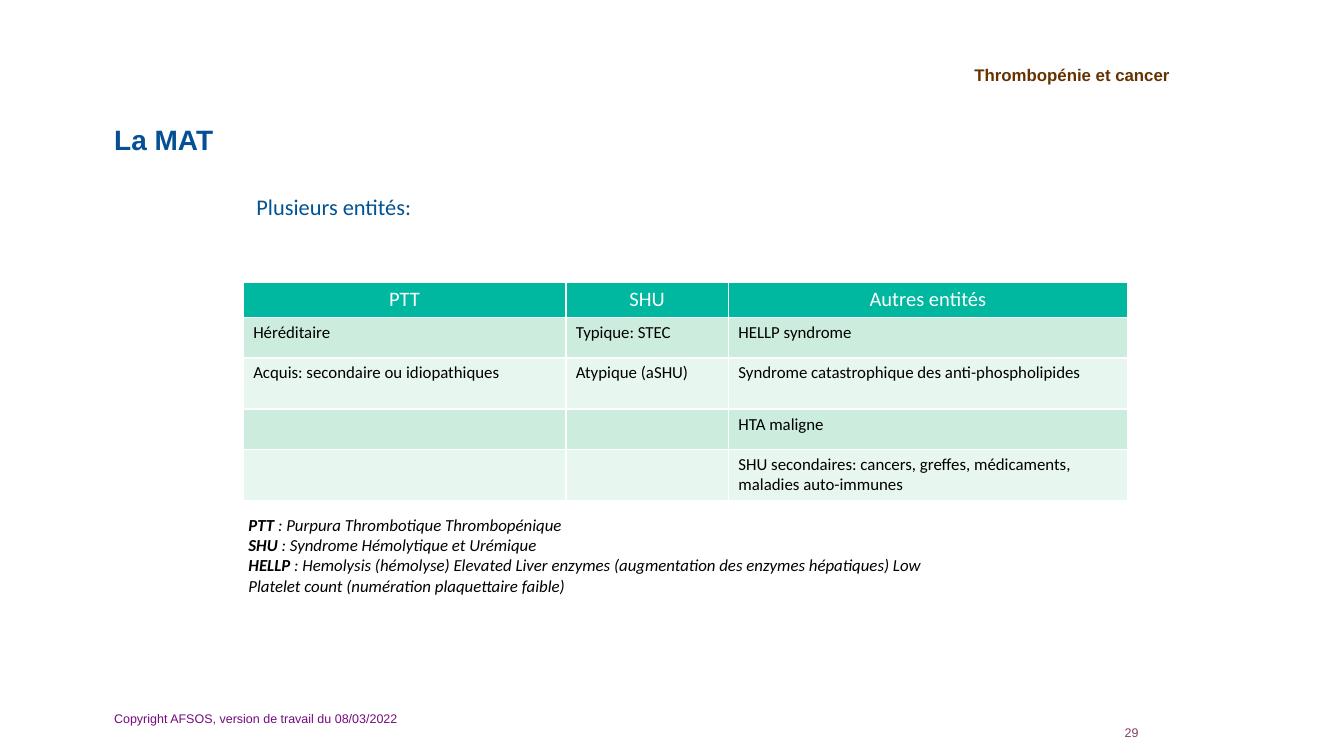
"""Build the slide that lists the forms of MAT."""
from dataclasses import dataclass

import pptx
import pptx.dml.color
import pptx.enum.text
import pptx.oxml.ns
import pptx.slide
import pptx.table
import pptx.text.text
import pptx.util
from lxml import etree

Inches = pptx.util.Inches
Align = pptx.enum.text.PP_ALIGN
Anchor = pptx.enum.text.MSO_ANCHOR


@dataclass(frozen=True)
class Theme:
    """Hold the colours, fonts and type sizes."""
    head: str = "Arial"
    body: str = "Calibri"
    brown: str = "663300"
    blue: str = "055095"
    azure: str = "005394"
    plum: str = "863966"
    purple: str = "770980"
    black: str = "000000"
    white: str = "FFFFFF"
    teal: str = "00B7A0"
    bands: tuple[str, str] = ("CCECDE", "E7F6EF")
    title: float = 15
    lead: float = 12
    label: float = 11
    text: float = 9
    small: float = 6.75
    rule: float = 1


THEME = Theme()


@dataclass(frozen=True)
class Style:
    """Describe how a run looks."""
    face: str
    size: float
    tint: str
    bold: bool = False
    slant: bool = False


@dataclass(frozen=True)
class Box:
    """Describe a text area made of paragraphs of runs."""
    left: float
    top: float
    width: float
    height: float
    lines: tuple[tuple[tuple[str, Style], ...], ...]
    align: Align = Align.LEFT
    anchor: Anchor = Anchor.TOP
    inset: tuple[float, float, float, float] = (0.1, 0.05, 0.1, 0.05)


TERM = Style(THEME.body, THEME.text, THEME.black, True, True)
NOTE = Style(THEME.body, THEME.text, THEME.black, False, True)
LABEL = Style(THEME.body, THEME.label, THEME.white)
ENTRY = Style(THEME.body, THEME.text, THEME.black)

TITLE = Box(0.75, 0.69, 8.5, 0.69,
            ((("La MAT", Style(THEME.head, THEME.title, THEME.blue, True)),),),
            anchor=Anchor.MIDDLE)
BOXES = (
    Box(5.87, 0.33, 2.93, 0.45,
        ((("Thrombopénie et cancer", Style(THEME.head, THEME.text, THEME.brown, True)),),),
        Align.RIGHT, Anchor.MIDDLE),
    Box(8.24, 5.39, 0.32, 0.12,
        ((("29", Style(THEME.head, THEME.small, THEME.plum)),),),
        Align.CENTER, inset=(0.04, 0, 0, 0)),
    Box(1.81, 1.39, 6.14, 0.71,
        ((("Plusieurs entités:", Style(THEME.body, THEME.lead, THEME.azure)),),)),
    Box(0.75, 5.2, 3.38, 0.3,
        ((("Copyright AFSOS, version de travail du 08/03/2022",
           Style(THEME.head, THEME.small, THEME.purple)),),),
        anchor=Anchor.MIDDLE),
    Box(1.75, 3.78, 5.29, 0.71, (
        (("PTT", TERM), (" : Purpura Thrombotique Thrombopénique", NOTE)),
        (("SHU", TERM), (" : Syndrome Hémolytique et Urémique", NOTE)),
        (("HELLP ", TERM),
         (": Hemolysis (hémolyse) Elevated Liver enzymes (augmentation des enzymes "
          "hépatiques) Low Platelet count (numération plaquettaire faible)", NOTE)),
    )),
)
WIDTHS = (2.4, 1.21, 2.97)
HEIGHTS = (0.25, 0.3, 0.38, 0.3, 0.38)
ROWS = (
    ("PTT", "SHU", "Autres entités"),
    ("Héréditaire", "Typique: STEC", "HELLP syndrome"),
    ("Acquis: secondaire ou idiopathiques", "Atypique (aSHU)",
     "Syndrome catastrophique des anti-phospholipides"),
    ("", "", "HTA maligne"),
    ("", "", "SHU secondaires: cancers, greffes, médicaments, maladies auto-immunes"),
)


def paint(tint: str) -> pptx.dml.color.RGBColor:
    """Turn a hex code into a colour."""
    return pptx.dml.color.RGBColor.from_string(tint)


def write(para: pptx.text.text._Paragraph, text: str, style: Style) -> None:
    """Add one styled run."""
    run = para.add_run()
    run.text = text
    font = run.font
    font.name, font.size = style.face, pptx.util.Pt(style.size)
    font.bold, font.italic = style.bold, style.slant
    font.color.rgb = paint(style.tint)


def fill(frame: pptx.text.text.TextFrame, box: Box) -> None:
    """Set up a text frame and write its lines."""
    frame.word_wrap = True
    frame.auto_size = pptx.enum.text.MSO_AUTO_SIZE.NONE
    frame.vertical_anchor = box.anchor
    (frame.margin_left, frame.margin_top,
     frame.margin_right, frame.margin_bottom) = map(Inches, box.inset)
    for index, line in enumerate(box.lines):
        para = frame.add_paragraph() if index else frame.paragraphs[0]
        para.alignment = box.align
        for text, style in line:
            write(para, text, style)


def place(box: Box) -> tuple[pptx.util.Length, ...]:
    """Give the box position and size as lengths."""
    return tuple(map(Inches, (box.left, box.top, box.width, box.height)))


def edge(cell: pptx.table._Cell) -> None:
    """Draw white rules around a cell."""
    qn = pptx.oxml.ns.qn
    props = cell._tc.get_or_add_tcPr()
    for index, side in enumerate(("lnL", "lnR", "lnT", "lnB")):
        line = etree.Element(qn(f"a:{side}"), w=str(pptx.util.Pt(THEME.rule)))
        solid = etree.SubElement(line, qn("a:solidFill"))
        etree.SubElement(solid, qn("a:srgbClr"), val=THEME.white)
        props.insert(index, line)


def draw_cell(cell: pptx.table._Cell, text: str, row: int) -> None:
    """Fill, rule and write one cell."""
    style = ENTRY if row else LABEL
    cell.margin_left = cell.margin_right = Inches(0.3) // 4
    cell.margin_top = cell.margin_bottom = Inches(0.15) // 4
    cell.fill.solid()
    cell.fill.fore_color.rgb = paint(THEME.bands[(row - 1) % 2] if row else THEME.teal)
    edge(cell)
    para = cell.text_frame.paragraphs[0]
    para.alignment = Align.LEFT if row else Align.CENTER
    if text:
        write(para, text, style)
    else:
        etree.SubElement(para._p, pptx.oxml.ns.qn("a:endParaRPr"), sz=str(style.size * 100))


def draw_table(slide: pptx.slide.Slide) -> None:
    """Draw the table of entities."""
    frame = slide.shapes.add_table(len(ROWS), len(WIDTHS), Inches(1.81), Inches(2.1),
                                   Inches(sum(WIDTHS)), Inches(sum(HEIGHTS)))
    table = frame.table
    table.first_row = table.horz_banding = False
    for column, width in zip(table.columns, WIDTHS):
        column.width = Inches(width)
    for row, (texts, height) in enumerate(zip(ROWS, HEIGHTS)):
        table.rows[row].height = Inches(height)
        for column, text in enumerate(texts):
            draw_cell(table.cell(row, column), text, row)


def main() -> None:
    """Build and save the deck."""
    deck = pptx.Presentation()
    deck.slide_width = Inches(10)
    deck.slide_height = deck.slide_width * 9 // 16
    slide = deck.slides.add_slide(deck.slide_layouts[5])
    title = slide.shapes.title
    title.left, title.top, title.width, title.height = place(TITLE)
    fill(title.text_frame, TITLE)
    for box in BOXES:
        fill(slide.shapes.add_textbox(*place(box)).text_frame, box)
    draw_table(slide)
    deck.save("out.pptx")


if __name__ == "__main__":
    main()
